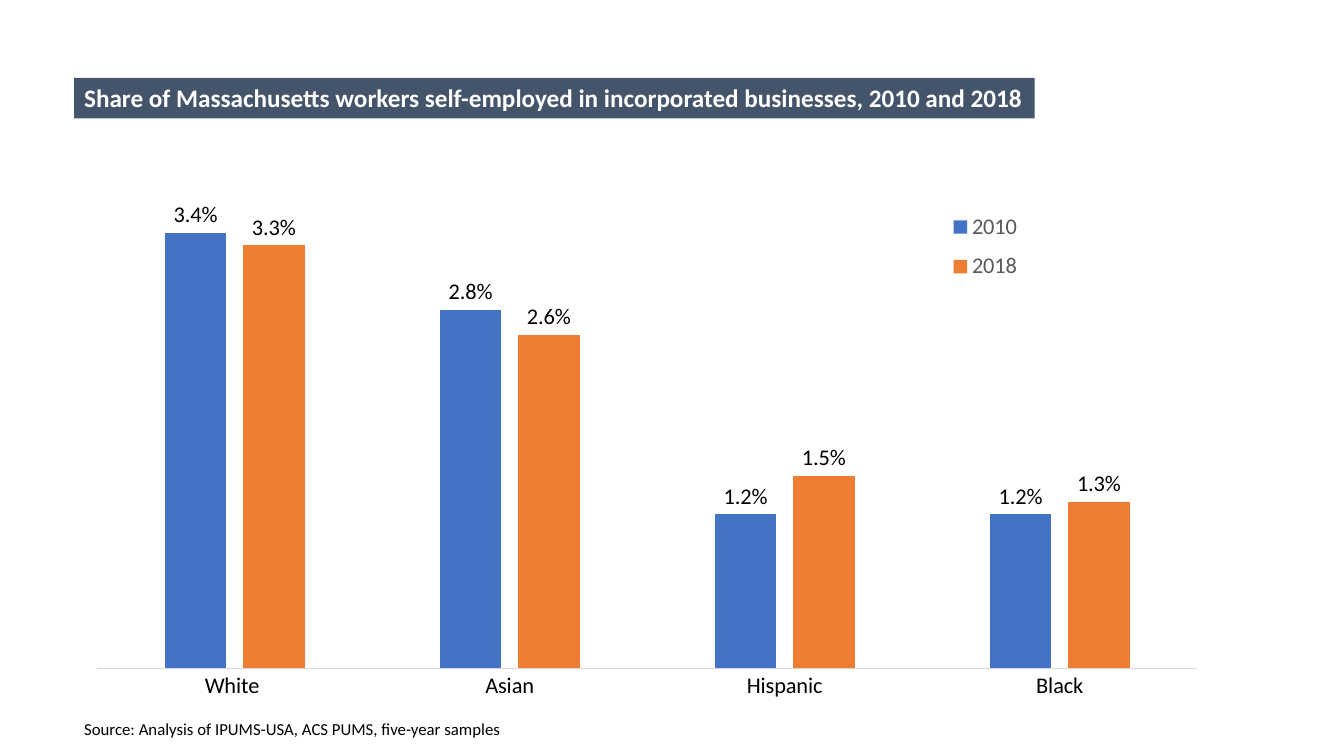
from pptx import Presentation
from pptx.chart.data import CategoryChartData
from pptx.dml.color import RGBColor
from pptx.enum import chart as ch, text
from pptx.oxml import parse_xml
from pptx.oxml.ns import nsdecls
from pptx.util import Pt

FONT = "Calibri"
TITLE = ("Share of Massachusetts workers self-employed in incorporated "
         "businesses, 2010 and 2018")
SOURCE = "Source: Analysis of IPUMS-USA, ACS PUMS, five-year samples"
GROUPS = ["White ", "Asian", "Hispanic", "Black"]
SHARES = {
    "2010": ("4472C4", [0.034, 0.028, 0.012, 0.012]),
    "2018": ("ED7D31", [0.033, 0.026, 0.015, 0.013]),
}
PERCENT = "0.0%"
LEFT = 53
# Fractions of the chart: x, y, width, height
PLOT_AREA = (0.02, 0.016, 0.96, 0.84)
LEGEND_AREA = (0.76, 0.09, 0.07, 0.15)


def rgb(code):
    return RGBColor.from_string(code)


def style(font, size, color, bold=False):
    font.name, font.size, font.bold = FONT, Pt(size), bold
    font.color.rgb = rgb(color)


def add_line(slide, words, top, width, height, size, color, bold=False):
    box = slide.shapes.add_textbox(Pt(LEFT), Pt(top), Pt(width), Pt(height))
    box.text_frame.word_wrap = True
    paragraph = box.text_frame.paragraphs[0]
    paragraph.text = words
    style(paragraph.font, size, color, bold)
    return box


def manual_layout(area, inner=False):
    """Return a c:layout element that fixes a chart part to the given area."""
    target = '<c:layoutTarget val="inner"/>' if inner else ""
    modes = "".join(f'<c:{side}Mode val="edge"/>' for side in "xy")
    sizes = "".join(f'<c:{side} val="{share}"/>'
                    for side, share in zip("xywh", area))
    return parse_xml(f'<c:layout {nsdecls("c")}><c:manualLayout>'
                     f'{target}{modes}{sizes}</c:manualLayout></c:layout>')


def add_share_chart(slide):
    data = CategoryChartData(number_format=PERCENT)
    data.categories = GROUPS
    for year, (_, shares) in SHARES.items():
        data.add_series(year, shares)
    chart = slide.shapes.add_chart(
        ch.XL_CHART_TYPE.COLUMN_CLUSTERED, Pt(LEFT), Pt(104.4),
        Pt(818.6), Pt(435.6), data).chart
    chart.has_title = False
    style(chart.font, 10, "000000")

    plot = chart.plots[0]
    plot.gap_width, plot.overlap = 219, -27
    plot.vary_by_categories = False
    for series, (color, _) in zip(plot.series, SHARES.values()):
        series.format.fill.solid()
        series.format.fill.fore_color.rgb = rgb(color)
        labels = series.data_labels
        labels.show_value = True
        labels.number_format = PERCENT
        labels.number_format_is_linked = False
        labels.position = ch.XL_LABEL_POSITION.OUTSIDE_END
        style(labels.font, 16, "000000")

    groups = chart.category_axis
    groups.major_tick_mark = ch.XL_TICK_MARK.NONE
    groups.format.line.color.rgb = rgb("D9D9D9")
    groups.format.line.width = Pt(0.75)
    style(groups.tick_labels.font, 16, "000000")

    share_axis = chart.value_axis
    share_axis.minimum_scale, share_axis.maximum_scale = 0, 0.04
    share_axis.has_major_gridlines = False
    share_axis.tick_labels.number_format = PERCENT
    share_axis.tick_labels.number_format_is_linked = False
    share_axis.visible = False

    chart.has_legend = True
    legend = chart.legend
    legend.position = ch.XL_LEGEND_POSITION.BOTTOM
    legend.include_in_layout = False
    style(legend.font, 16, "595959")

    plot_area = chart._chartSpace.chart.plotArea
    for old in plot_area.findall("{*}layout"):
        plot_area.remove(old)
    plot_area.insert(0, manual_layout(PLOT_AREA, inner=True))
    legend_xml = legend._element
    for old in legend_xml.findall("{*}layout"):
        legend_xml.remove(old)
    legend_xml.find("{*}legendPos").addnext(manual_layout(LEGEND_AREA))


def main():
    deck = Presentation()
    deck.slide_width, deck.slide_height = Pt(960), Pt(540)
    slide = deck.slides.add_slide(deck.slide_layouts[6])

    title = add_line(slide, TITLE, 55.6, 686, 29, 18, "FFFFFF", bold=True)
    title.fill.solid()
    title.fill.fore_color.rgb = rgb("44546A")
    title.text_frame.auto_size = text.MSO_AUTO_SIZE.SHAPE_TO_FIT_TEXT

    add_line(slide, SOURCE, 510, 330, 22, 12, "000000")
    add_share_chart(slide)
    deck.save("out.pptx")


if __name__ == "__main__":
    main()
